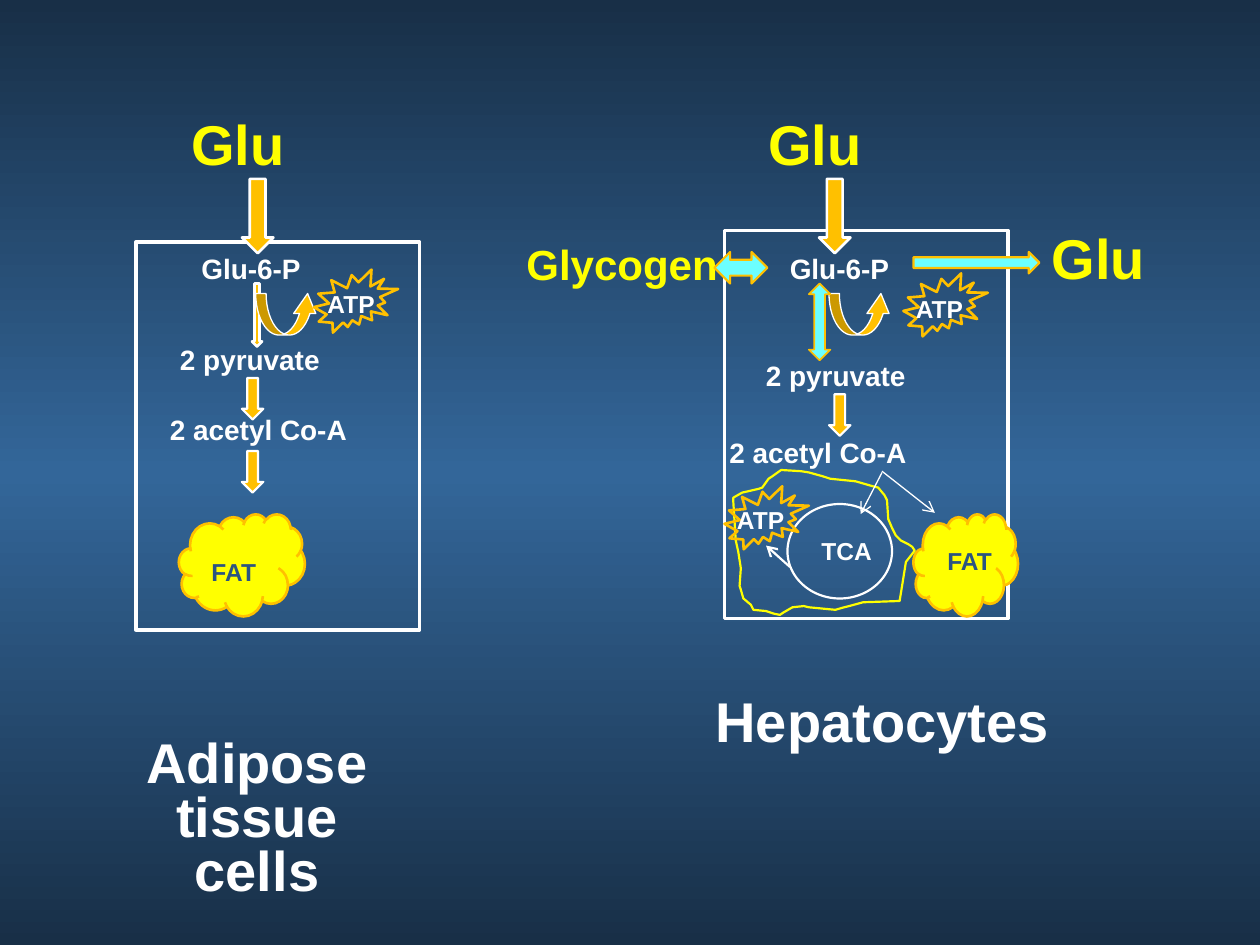
from copy import deepcopy
from lxml.etree import SubElement as Sub
from pptx import Presentation
from pptx.dml.color import RGBColor as RGB
from pptx.enum.shapes import MSO_CONNECTOR as Conn, MSO_SHAPE as Kind
from pptx.enum.text import MSO_AUTO_SIZE as Auto, PP_ALIGN as Align
from pptx.oxml.ns import qn
from pptx.util import Inches, Pt

WHITE = RGB(0xFF, 0xFF, 0xFF)
YELLOW = RGB(0xFF, 0xFF, 0x00)
GOLD = RGB(0xFF, 0xC0, 0x00)
AQUA = RGB(0x6C, 0xFF, 0xFF)
NAVY = RGB(0x2B, 0x54, 0x81)
DARK = RGB(0x18, 0x2F, 0x47)
BLUE = RGB(0x33, 0x66, 0x99)

MEMBRANE = [
    (582, 395), (589, 391), (602, 388), (605, 387), (610, 380), (613, 378),
    (620, 373), (636, 374), (642, 375), (653, 378), (659, 380), (679, 382),
    (693, 386), (697, 387), (702, 393), (704, 397), (705, 412), (708, 419),
    (711, 425), (715, 429), (721, 432), (724, 434), (726, 437), (719, 446),
    (715, 471), (714, 477), (685, 478), (674, 481), (670, 482), (663, 484),
    (642, 482), (638, 481), (629, 482), (622, 486), (619, 488), (614, 487),
    (608, 485), (598, 484), (596, 480), (590, 475), (588, 468), (587, 465),
    (588, 451), (586, 438), (584, 429), (582, 398),
]


class Board:
    """Draws styled elements on the current slide."""

    font = "Arial"

    def __init__(self, deck):
        self.slide = deck.slides.add_slide(deck.slide_layouts[6])
        self.shapes = self.slide.shapes

    def back(self, edge, mid):
        fill = self.slide.background.fill
        fill.gradient()
        fill.gradient_angle = 90
        for stop in fill.gradient_stops:
            stop.color.rgb = mid
        first = next(self.slide.element.iter(qn("a:gs")))
        first.addnext(deepcopy(first))
        stops = fill.gradient_stops
        for stop, spot, tone in zip(stops, (0, 0.5, 1), (edge, mid, edge)):
            stop.position = spot
            stop.color.rgb = tone

    def paint(self, shape, fill, line, width):
        shape.shadow.inherit = False
        if fill is None:
            shape.fill.background()
        else:
            shape.fill.solid()
            shape.fill.fore_color.rgb = fill
        shape.line.color.rgb = line
        shape.line.width = Pt(width)

    def shape(self, kind, box, fill, line, width, adj=()):
        item = self.shapes.add_shape(kind, *map(Inches, box))
        for i, val in enumerate(adj):
            item.adjustments[i] = val
        self.paint(item, fill, line, width)

    def outline(self, points, line, width):
        pen = self.shapes.build_freeform(*points[0], scale=Inches(1) / 100)
        pen.add_line_segments(points[1:], close=True)
        self.paint(pen.convert_to_shape(), None, line, width)

    def arrow(self, start, end, width):
        item = self.shapes.add_connector(
            Conn.STRAIGHT, *map(Inches, start + end))
        item.line.color.rgb = WHITE
        item.line.width = Pt(width)
        props = item.element.spPr
        Sub(props.find(qn("a:ln")), qn("a:tailEnd"), type="arrow")
        Sub(props, qn("a:effectLst"))

    def text(self, words, box, size, color=WHITE, align=Align.LEFT):
        frame = self.shapes.add_textbox(*map(Inches, box)).text_frame
        frame.word_wrap = True
        frame.auto_size = Auto.SHAPE_TO_FIT_TEXT
        para = frame.paragraphs[0]
        para.alignment = align
        para.line_spacing = 0.8
        gap = Sub(para._p.get_or_add_pPr(), qn("a:spcBef"))
        Sub(gap, qn("a:spcPct"), val="50000")
        run = para.add_run()
        run.text = words
        font = run.font
        font.name, font.size, font.bold = self.font, Pt(size), True
        font.color.rgb = color

    def step(self, words, left, top, width=1.75):
        self.text(words, (left, top, width, 0.32), 16)

    def down(self, left, top):
        self.shape(Kind.DOWN_ARROW, (left, top, 0.17, 0.33),
                   GOLD, WHITE, 1.25)

    def burst(self, left, top, tx, ty):
        self.shape(Kind.EXPLOSION2, (left, top, 0.67, 0.5), None, GOLD, 1.5)
        self.text("ATP", (tx, ty, 0.58, 0.29), 14)

    def fat(self, left, top, width, tx, ty):
        self.shape(Kind.CLOUD, (left, top, width, 0.81), YELLOW, GOLD, 1.5)
        self.text("FAT", (tx, ty, 0.58, 0.29), 14, NAVY)

    def entry(self, left):
        self.text("Glu", (left, 0.92, 1.17, 0.53), 32, YELLOW)
        self.shape(Kind.DOWN_ARROW, (left + 0.5, 1.42, 0.25, 0.59),
                   GOLD, WHITE, 1.5)

    def cell(self, left, top):
        self.shape(Kind.RECTANGLE, (left, top, 2.25, 3.08), None, WHITE, 2)

    def curl(self, left):
        self.shape(Kind.CURVED_UP_ARROW, (left, 2.33, 0.5, 0.33),
                   GOLD, WHITE, 0.75, (0.25, 0.534, 0.481))


def adipose(board):
    board.cell(1.08, 1.92)
    board.text("Adipose tissue cells", (0.83, 5.83, 2.42, 1.39), 32,
               align=Align.CENTER)
    board.shape(Kind.DOWN_ARROW, (2, 2.25, 0.08, 0.5), GOLD, WHITE, 1.5)
    board.entry(1.42)
    board.step("Glu-6-P", 1.5, 2, 1.25)
    board.step("2 pyruvate", 1.33, 2.72)
    board.step("2 acetyl Co-A", 1.25, 3.28)
    board.curl(2.03)
    board.burst(2.49, 2.14, 2.5, 2.29)
    board.down(1.92, 3)
    board.down(1.92, 3.58)
    board.fat(1.42, 4.08, 1, 1.58, 4.42)


def liver(board):
    board.cell(5.75, 1.83)
    board.text("Hepatocytes", (5.58, 5.5, 2.92, 0.53), 32)
    board.text("Glycogen", (4.08, 1.92, 1.83, 0.42), 24, YELLOW)
    board.step("Glu-6-P", 6.17, 2, 1.25)
    board.curl(6.58)
    board.burst(7.17, 2.17, 7.17, 2.33)
    board.text("Glu", (8.25, 1.83, 1.17, 0.53), 32, YELLOW)
    board.step("2 pyruvate", 5.98, 2.85)
    board.down(6.58, 3.13)
    board.step("2 acetyl Co-A", 5.69, 3.46)
    board.arrow((7, 3.74), (7.42, 4.07), 0.75)
    board.fat(7.25, 4.08, 0.83, 7.42, 4.33)
    board.outline(MEMBRANE, YELLOW, 1.25)
    board.shape(Kind.OVAL, (6.25, 4, 0.83, 0.75), None, WHITE, 1.25)
    board.text("TCA", (6.42, 4.25, 0.75, 0.29), 14)
    board.arrow((7, 3.75), (6.83, 4.08), 0.75)
    board.arrow((6.27, 4.5), (6.08, 4.33), 1.25)
    board.burst(5.75, 3.86, 5.75, 4)
    board.shape(Kind.UP_DOWN_ARROW, (6.42, 2.25, 0.17, 0.61), AQUA, GOLD, 1)
    board.shape(Kind.LEFT_RIGHT_ARROW, (5.67, 2, 0.42, 0.25),
                AQUA, GOLD, 1.25)
    board.entry(6)
    board.shape(Kind.RIGHT_ARROW, (7.25, 2, 1, 0.17), AQUA, GOLD, 1.25)


def main():
    deck = Presentation()
    deck.slide_width, deck.slide_height = Inches(10), Inches(7.5)
    board = Board(deck)
    board.back(DARK, BLUE)
    adipose(board)
    liver(board)
    deck.save("out.pptx")


if __name__ == "__main__":
    main()
